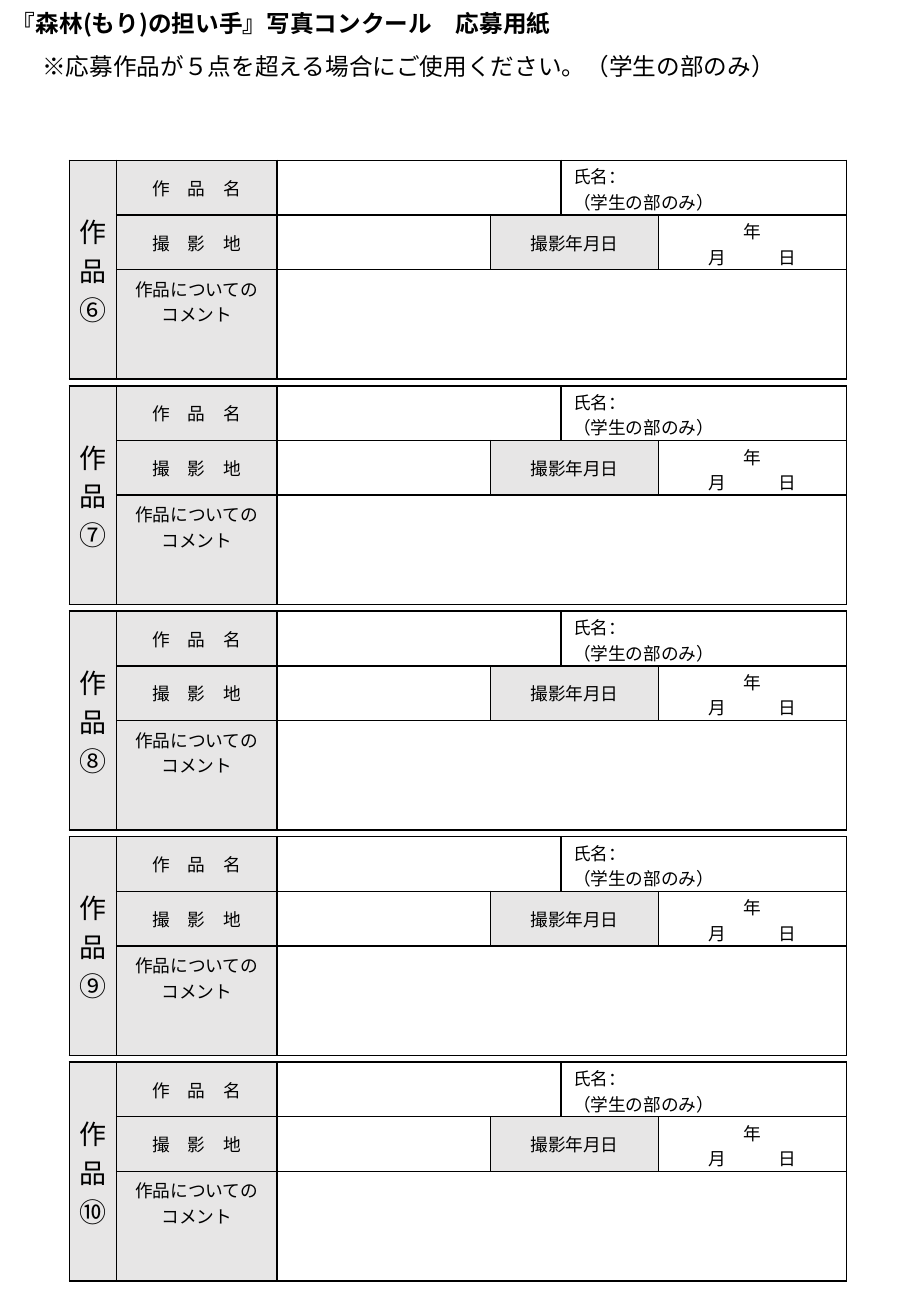
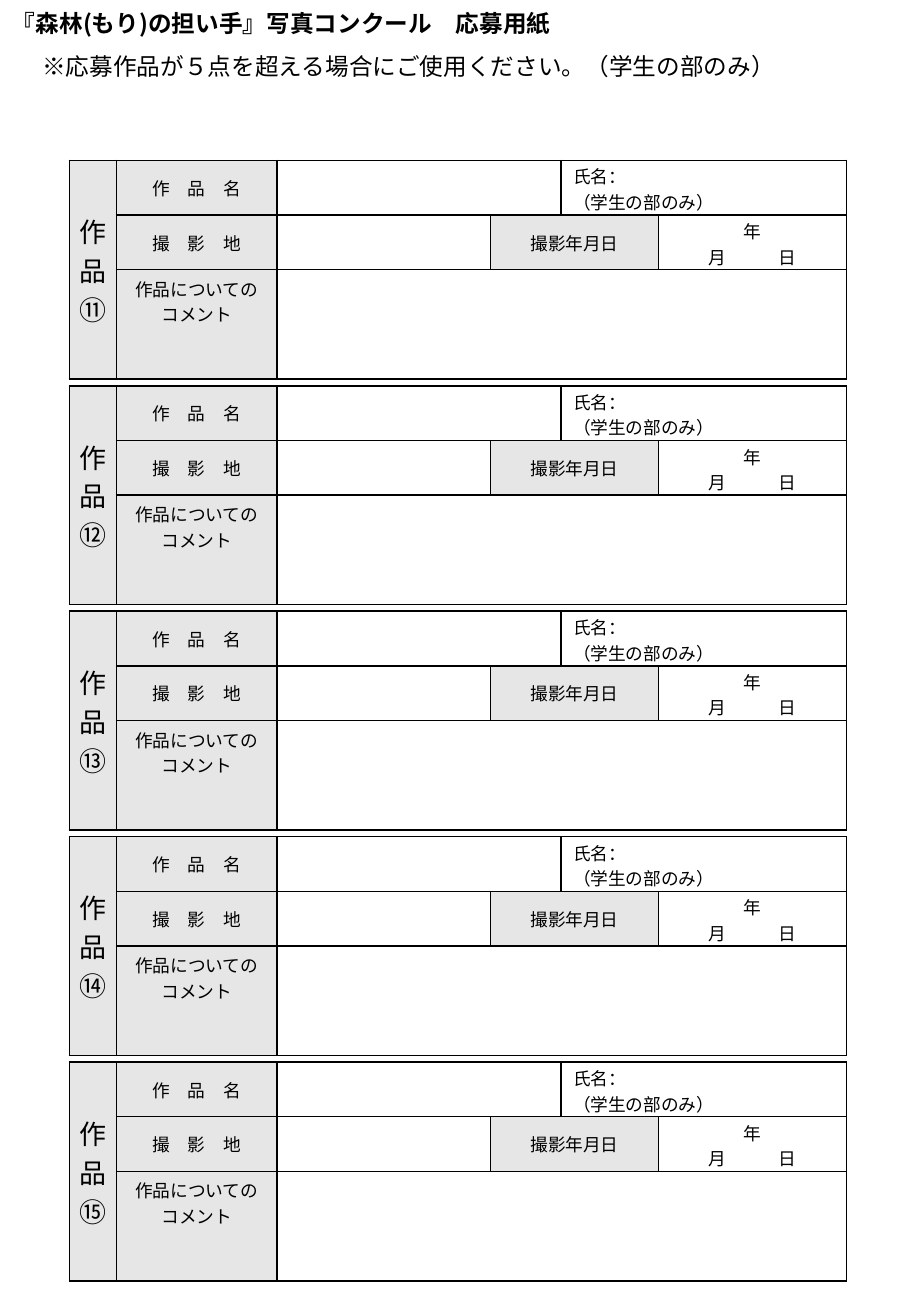
import pptx
import pptx.dml.color
import pptx.enum.text
import pptx.oxml.ns
import pptx.util
from lxml import etree

Inches = pptx.util.Inches
Pt = pptx.util.Pt
ALIGN = pptx.enum.text.PP_ALIGN
ANCHOR = pptx.enum.text.MSO_ANCHOR

# Content
TITLE = "『森林(もり)の担い手』写真コンクール　応募用紙"
NOTE = "※応募作品が５点を超える場合にご使用ください。（学生の部のみ）"
ENTRY_NUMBERS = ["⑥⑦⑧⑨⑩", "⑪⑫⑬⑭⑮"]

# Shared look
COLORS = {"text": "000000", "border": "000000", "label": "E7E6E6"}
FONT = "Noto Sans CJK JP"
HEADINGS = [
    {"text": TITLE, "left": 0, "top": 0.02, "bold": True},
    {"text": NOTE, "left": 0.25, "top": 0.38, "bold": False},
]

# Entry form: sizes in inches, cells as (row, column)
FORM_LEFT, FIRST_TOP, LAST_TOP = 0.57, 1.32, 8.74
COLUMN_WIDTHS = [0.39, 1.32, 1.76, 0.58, 0.8, 1.55]
ROW_HEIGHTS = [0.45, 0.45, 0.9]
MERGES = [
    ((0, 0), (2, 0)),
    ((0, 2), (0, 3)),
    ((0, 4), (0, 5)),
    ((1, 3), (1, 4)),
    ((2, 2), (2, 5)),
]
SIDE = {"size": 16, "margin_left": 0.05, "margin_right": 0.05}
TIGHT = {"margin_top": 0.02, "margin_bottom": 0}
FIELDS = {
    (0, 0): (["作品{number}"], SIDE),
    (0, 1): (["作　品　名"], {}),
    (0, 4): (["氏名：", "（学生の部のみ）"], {"align": ALIGN.LEFT, **TIGHT}),
    (1, 1): (["撮　影　地"], {}),
    (1, 3): (["撮影年月日"], {}),
    (1, 5): (["年", "月　　　日"], TIGHT),
    (2, 1): (["作品についての", "コメント"], {"anchor": ANCHOR.TOP}),
}
LABEL_CELLS = {(0, 0), (0, 1), (1, 1), (1, 3), (2, 1)}


def color(name):
    return pptx.dml.color.RGBColor.from_string(COLORS[name])


def write_lines(text_frame, lines, size, align, bold=False):
    text_frame.text = "\n".join(lines)
    for paragraph in text_frame.paragraphs:
        paragraph.alignment = align
        font = paragraph.runs[0].font
        for name, value in {"name": FONT, "size": Pt(size), "bold": bold}.items():
            setattr(font, name, value)
        font.color.rgb = color("text")
        properties = paragraph.runs[0]._r.get_or_add_rPr()
        east_asian = etree.SubElement(properties, pptx.oxml.ns.qn("a:ea"))
        east_asian.set("typeface", FONT)


def add_heading(slide, heading):
    box = slide.shapes.add_textbox(
        Inches(heading["left"]), Inches(heading["top"]), Inches(7.25), Inches(0.38))
    box.text_frame.word_wrap = True
    write_lines(box.text_frame, [heading["text"]], 14, ALIGN.LEFT, heading["bold"])


def add_borders(cell):
    properties = cell._tc.get_or_add_tcPr()
    for side in ("a:lnL", "a:lnR", "a:lnT", "a:lnB"):
        line = etree.SubElement(properties, pptx.oxml.ns.qn(side), w=str(Pt(1)))
        fill = etree.SubElement(line, pptx.oxml.ns.qn("a:solidFill"))
        etree.SubElement(fill, pptx.oxml.ns.qn("a:srgbClr"), val=COLORS["border"])


def fill_field(cell, lines, style):
    cell.vertical_anchor = style.get("anchor", ANCHOR.MIDDLE)
    for name, value in style.items():
        if name.startswith("margin"):
            setattr(cell, name, Inches(value))
    write_lines(cell.text_frame, lines, style.get("size", 10.5),
                style.get("align", ALIGN.CENTER))


def add_entry_form(slide, top, number):
    table = slide.shapes.add_table(
        len(ROW_HEIGHTS), len(COLUMN_WIDTHS), Inches(FORM_LEFT), Inches(top),
        Inches(sum(COLUMN_WIDTHS)), Inches(sum(ROW_HEIGHTS))).table
    table.first_row = table.horz_banding = False
    for column, width in zip(table.columns, COLUMN_WIDTHS):
        column.width = Inches(width)
    for row, height in zip(table.rows, ROW_HEIGHTS):
        row.height = Inches(height)

    for row in range(len(ROW_HEIGHTS)):
        for column in range(len(COLUMN_WIDTHS)):
            cell = table.cell(row, column)
            add_borders(cell)
            if (row, column) in LABEL_CELLS:
                cell.fill.solid()
                cell.fill.fore_color.rgb = color("label")
            else:
                cell.fill.background()
    for first, last in MERGES:
        table.cell(*first).merge(table.cell(*last))
    for position, (lines, style) in FIELDS.items():
        texts = [line.format(number=number) for line in lines]
        fill_field(table.cell(*position), texts, style)


def main():
    presentation = pptx.Presentation()
    presentation.slide_width = Inches(7.5)
    presentation.slide_height = Inches(10.83)
    for numbers in ENTRY_NUMBERS:
        slide = presentation.slides.add_slide(presentation.slide_layouts[6])
        for heading in HEADINGS:
            add_heading(slide, heading)
        step = (LAST_TOP - FIRST_TOP) / (len(numbers) - 1)
        for index, number in enumerate(numbers):
            add_entry_form(slide, FIRST_TOP + index * step, number)
    presentation.save("out.pptx")


if __name__ == "__main__":
    main()
